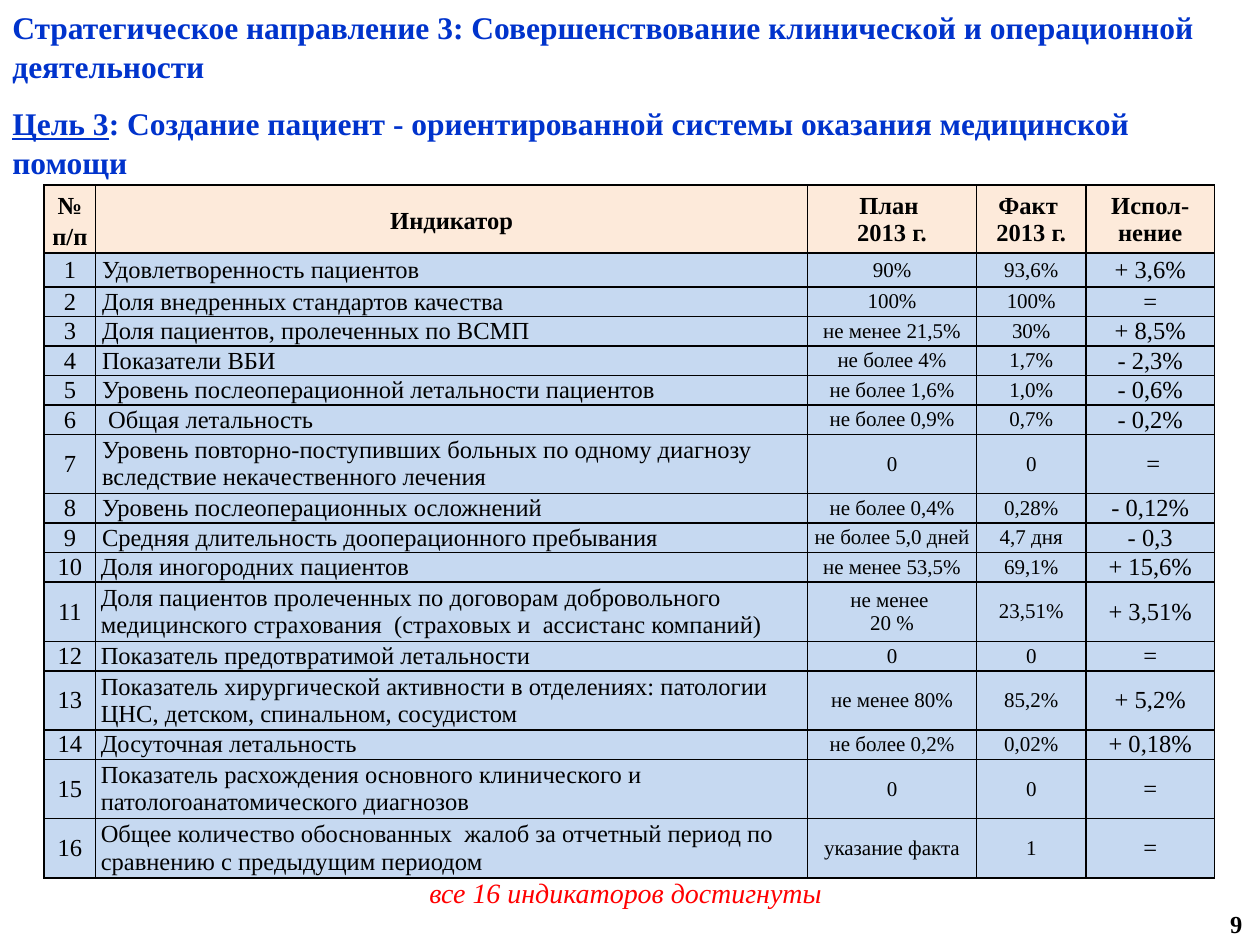
from dataclasses import dataclass
from typing import Any

from lxml import etree
from pptx import Presentation
from pptx.dml.color import RGBColor
from pptx.enum.text import MSO_ANCHOR, PP_ALIGN
from pptx.oxml.ns import qn
from pptx.util import Inches, Pt

LEFT, CENTER, RIGHT = PP_ALIGN.LEFT, PP_ALIGN.CENTER, PP_ALIGN.RIGHT
TOP, MIDDLE = MSO_ANCHOR.TOP, MSO_ANCHOR.MIDDLE
FONT = "Times New Roman"
COLORS = {
    "title": "0033CC",
    "text": "000000",
    "summary": "FF0000",
    "header": "FDEADA",
    "body": "C6D9F1",
}
COLUMN_WIDTHS = (0.41, 5.65, 1.34, 0.87, 1.02)
BODY_SIZES = (14, 14, 12, 12, 14)
HEADERS = ("№ п/п", "Индикатор", "План \n2013 г.", "Факт \n2013 г.", "Испол-нение")
HEADER_HEIGHT, FIRST_HEIGHT, SINGLE_HEIGHT, DOUBLE_HEIGHT = 0.54, 0.27, 0.23, 0.47
FIRST_NARROW_INSET = 10


@dataclass(frozen=True)
class Style:
    size: float
    color: str = "text"
    bold: bool = False
    italic: bool = False
    underline: bool = False


@dataclass(frozen=True)
class Indicator:
    name: str
    plan: str
    fact: str
    result: str
    height: float = SINGLE_HEIGHT


INDICATORS = (
    Indicator("Удовлетворенность пациентов", "90%", "93,6%", "+ 3,6%", FIRST_HEIGHT),
    Indicator("Доля внедренных стандартов качества", "100%", "100%", "="),
    Indicator("Доля пациентов, пролеченных по ВСМП", "не менее 21,5%", "30%", "+ 8,5%"),
    Indicator("Показатели ВБИ", "не более 4%", "1,7%", "- 2,3%"),
    Indicator("Уровень послеоперационной летальности пациентов",
              "не более 1,6%", "1,0%", "- 0,6%"),
    Indicator(" Общая летальность", "не более 0,9%", "0,7%", "- 0,2%"),
    Indicator("Уровень повторно-поступивших больных по одному диагнозу "
              "вследствие некачественного лечения", "0", "0", " =", DOUBLE_HEIGHT),
    Indicator("Уровень послеоперационных осложнений", "не более 0,4%", "0,28%", "- 0,12%"),
    Indicator("Средняя длительность дооперационного пребывания",
              "не более 5,0 дней", "4,7 дня", "- 0,3"),
    Indicator("Доля иногородних пациентов", "не менее 53,5%", "69,1%", "+ 15,6%"),
    Indicator("Доля пациентов пролеченных по договорам добровольного медицинского "
              "страхования  (страховых и  ассистанс компаний)",
              "не менее \n20 %", "23,51%", "+ 3,51%", DOUBLE_HEIGHT),
    Indicator("Показатель предотвратимой летальности", "0", "0", "="),
    Indicator("Показатель хирургической активности в отделениях: патологии ЦНС, "
              "детском, спинальном, сосудистом",
              "не менее 80%", "85,2%", "+ 5,2%", DOUBLE_HEIGHT),
    Indicator("Досуточная летальность", "не более 0,2%", "0,02%", "+ 0,18%"),
    Indicator("Показатель расхождения основного клинического и "
              "патологоанатомического диагнозов", "0", "0", "=", DOUBLE_HEIGHT),
    Indicator("Общее количество обоснованных  жалоб за отчетный период по сравнению "
              "с предыдущим периодом", "указание факта", "1", "=", DOUBLE_HEIGHT),
)


def add_span(para: Any, text: str, style: Style) -> None:
    span = para.add_run()
    span.text = text
    font = span.font
    font.name = FONT
    font.size = Pt(style.size)
    font.bold = style.bold
    font.italic = style.italic
    font.underline = style.underline
    font.color.rgb = RGBColor.from_string(COLORS[style.color])


def add_box(page: Any, left: float, top: float, width: float, height: float,
            anchor: MSO_ANCHOR = TOP) -> Any:
    frame = page.shapes.add_textbox(
        Inches(left), Inches(top), Inches(width), Inches(height)).text_frame
    frame.word_wrap = True
    frame.vertical_anchor = anchor
    return frame


def add_line(page: Any, left: float, top: float, width: float, height: float,
             text: str, style: Style, align: PP_ALIGN, anchor: MSO_ANCHOR = TOP) -> None:
    para = add_box(page, left, top, width, height, anchor).paragraphs[0]
    para.alignment = align
    add_span(para, text, style)


def add_title(page: Any) -> None:
    frame = add_box(page, 0, 0, 10, 1.45)
    style = Style(18, "title", bold=True)
    direction, goal = frame.paragraphs[0], frame.add_paragraph()
    for para in (direction, goal):
        para.line_spacing = 1.04
    goal.space_before = Pt(10)
    add_span(direction, "Стратегическое направление 3: Совершенствование "
             "клинической и операционной деятельности", style)
    add_span(goal, "Цель 3", Style(18, "title", bold=True, underline=True))
    add_span(goal, ": Создание пациент - ориентированной системы оказания "
             "медицинской помощи", style)


def add_borders(cell: Any) -> None:
    properties = cell._tc.get_or_add_tcPr()
    for position, side in enumerate(("a:lnL", "a:lnR", "a:lnT", "a:lnB")):
        line = etree.Element(qn(side), w=str(Pt(1)))
        fill = etree.SubElement(line, qn("a:solidFill"))
        etree.SubElement(fill, qn("a:srgbClr"), val=COLORS["text"])
        properties.insert(position, line)


def fill_cell(cell: Any, text: str, style: Style, fill: str, align: PP_ALIGN,
              inset: float = 0.05, spacing: float = 1.0) -> None:
    cell.margin_left = cell.margin_right = Inches(inset)
    cell.margin_top = cell.margin_bottom = Inches(0)
    cell.vertical_anchor = MIDDLE
    cell.fill.solid()
    cell.fill.fore_color.rgb = RGBColor.from_string(COLORS[fill])
    add_borders(cell)
    frame = cell.text_frame
    for index, line in enumerate(text.split("\n")):
        para = frame.add_paragraph() if index else frame.paragraphs[0]
        para.alignment = align
        para.line_spacing = spacing
        add_span(para, line, style)


def add_indicators(page: Any) -> None:
    heights = [HEADER_HEIGHT] + [item.height for item in INDICATORS]
    table = page.shapes.add_table(
        len(heights), len(COLUMN_WIDTHS), Inches(0.35), Inches(1.47),
        Inches(sum(COLUMN_WIDTHS)), Inches(sum(heights))).table
    for column, width in zip(table.columns, COLUMN_WIDTHS):
        column.width = Inches(width)
    for row, height in zip(table.rows, heights):
        row.height = Inches(height)
    for column, text in enumerate(HEADERS):
        fill_cell(table.cell(0, column), text, Style(14, bold=True), "header", CENTER,
                  spacing=1.15 if column < 2 else 1.0)
    for number, item in enumerate(INDICATORS, 1):
        values = (str(number), item.name, item.plan, item.fact, item.result)
        for column, (text, size) in enumerate(zip(values, BODY_SIZES)):
            narrow = column > 0 and number >= FIRST_NARROW_INSET
            fill_cell(table.cell(number, column), text, Style(size), "body",
                      LEFT if column == 1 else CENTER, 0.04 if narrow else 0.05)


def main() -> None:
    deck = Presentation()
    deck.slide_width, deck.slide_height = Inches(10), Inches(7.5)
    page = deck.slides.add_slide(deck.slide_layouts[6])
    add_title(page)
    add_indicators(page)
    add_line(page, 0.28, 6.9, 9.37, 0.37, "все 16 индикаторов достигнуты",
             Style(16, "summary", italic=True), CENTER)
    add_line(page, 7.63, 7.13, 2.33, 0.4, "9", Style(14, bold=True), RIGHT, MIDDLE)
    deck.save("out.pptx")


if __name__ == "__main__":
    main()
